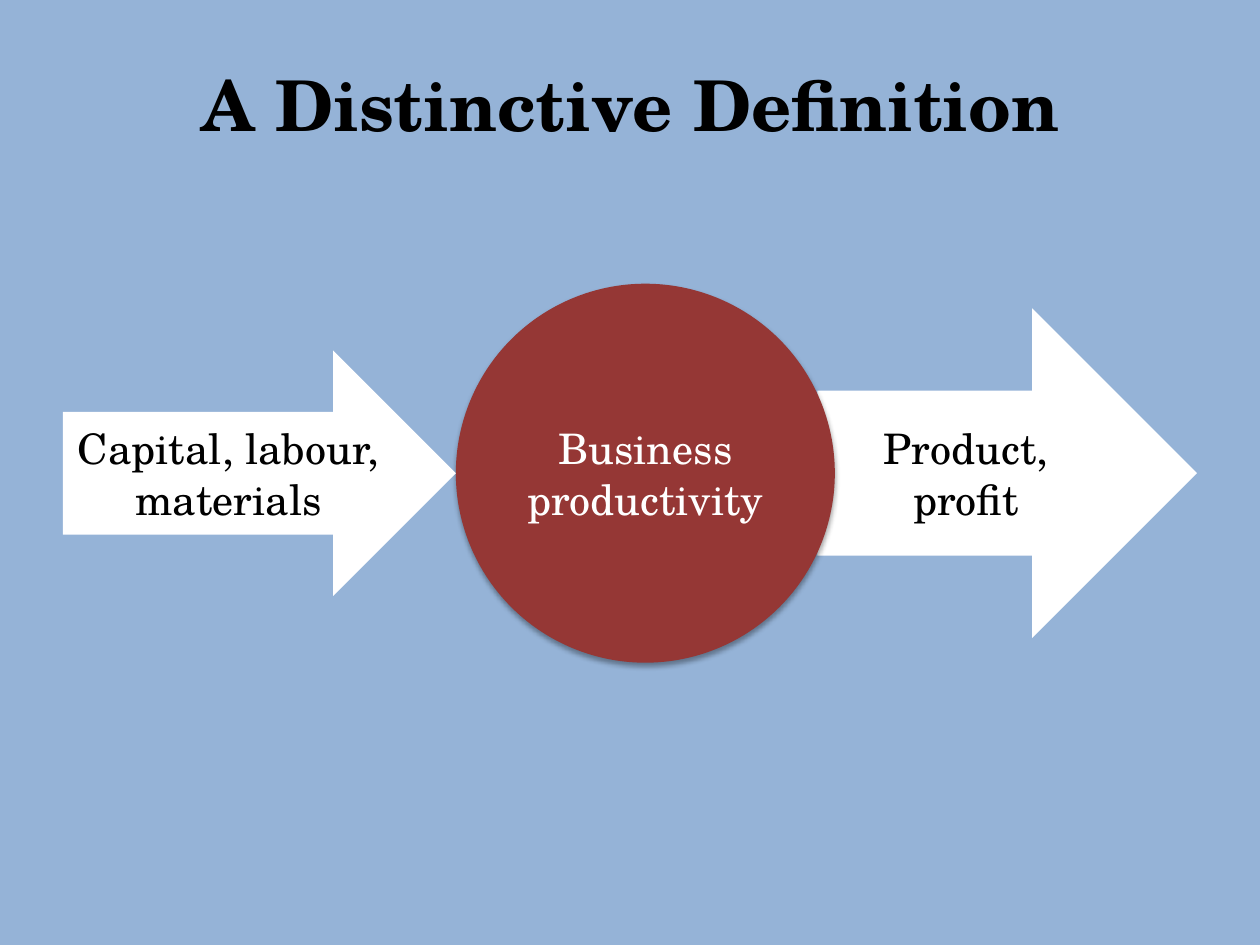
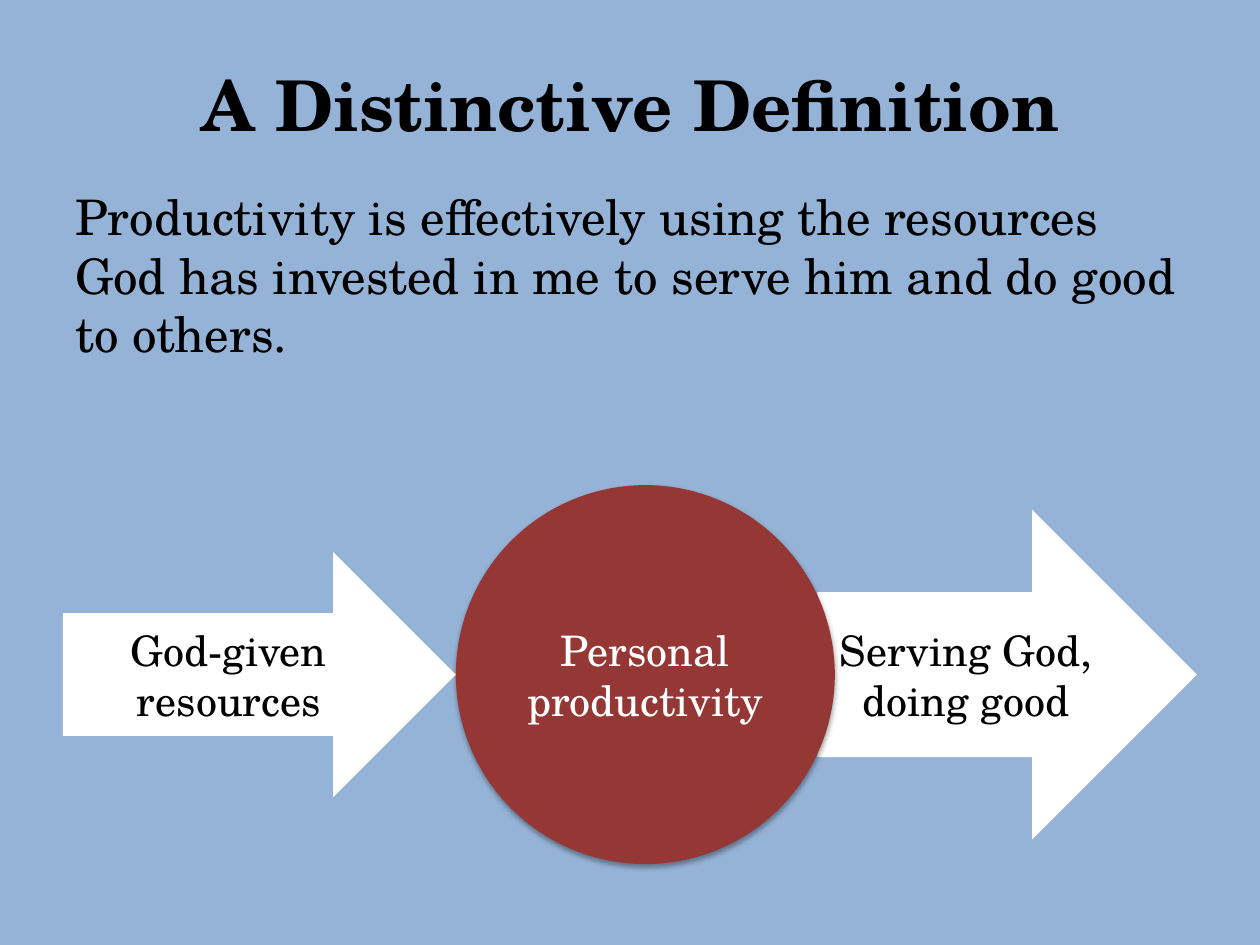
from dataclasses import dataclass

from lxml.etree import SubElement
from pptx import Presentation
from pptx.dml.color import RGBColor as Rgb
from pptx.enum.shapes import MSO_SHAPE as Kind
from pptx.enum.text import MSO_ANCHOR as Anchor, MSO_AUTO_SIZE as Fit, PP_ALIGN as Align
from pptx.oxml.ns import qn
from pptx.util import Cm, Pt


@dataclass(frozen=True)
class Theme:
    font: str = "TeX Gyre Schola"
    sky: str = "95B3D7"
    red: str = "953735"
    white: str = "FFFFFF"
    black: str = "000000"
    title: int = 40
    body: int = 28
    label: int = 24


@dataclass(frozen=True)
class Box:
    left: float
    top: float
    width: float
    height: float

    def cm(self):
        return [Cm(n) for n in (self.left, self.top, self.width, self.height)]


THEME = Theme()
TITLE = Box(3.76, 1.12, 17.91, 1.96)
BODY = Box(1.27, 3.63, 22.86, 3.84)
MIDDLE = Box(1.27, 5.72, 22.86, 7.64)
LOW = Box(1.27, 9.78, 22.86, 7.64)


def write(shape, text, size, color=THEME.black, bold=False, align=Align.CENTER, anchor=Anchor.MIDDLE):
    frame = shape.text_frame
    frame.word_wrap = True
    frame.vertical_anchor = anchor
    para = frame.paragraphs[0]
    para.alignment = align
    run = para.add_run()
    run.text = text
    font = run.font
    font.name, font.size, font.bold = THEME.font, Pt(size), bold
    font.color.rgb = Rgb.from_string(color)


def add_text(slide, box, text, size, **style):
    shape = slide.shapes.add_textbox(*box.cm())
    write(shape, text, size, anchor=Anchor.TOP, **style)
    shape.text_frame.auto_size = Fit.SHAPE_TO_FIT_TEXT


def add_part(group, kind, box, text, fill, color):
    shape = group.shapes.add_shape(kind, *box.cm())
    shape.shadow.inherit = False
    shape.fill.solid()
    shape.fill.fore_color.rgb = Rgb.from_string(fill)
    shape.line.fill.background()
    write(shape, text, THEME.label, color)
    return shape


def add_glow(shape):
    effects = shape._element.spPr.find(qn("a:effectLst"))
    shade = SubElement(effects, qn("a:outerShdw"), blurRad=str(Pt(3.1)),
                       dist=str(Pt(1.8)), dir="5400000", rotWithShape="0")
    tint = SubElement(shade, qn("a:srgbClr"), val=THEME.black)
    SubElement(tint, qn("a:alpha"), val="35000")


def add_flow(slide, box, source, core, result):
    group = slide.shapes.add_group_shape()
    size = box.height
    start, end = 7.92, 7.65

    def place(left, width, height):
        return Box(box.left + left, box.top + (size - height) / 2, width, height)

    add_part(group, Kind.RIGHT_ARROW, place(box.width - end, end, 6.65),
             result, THEME.white, THEME.black)
    disc = add_part(group, Kind.OVAL, place(start, size, size),
                    core, THEME.red, THEME.white)
    add_glow(disc)
    add_part(group, Kind.RIGHT_ARROW, place(0, start, 4.95),
             source, THEME.white, THEME.black)


def add_slide(deck, flow, labels, body=None):
    slide = deck.slides.add_slide(deck.slide_layouts[6])
    slide.background.fill.solid()
    slide.background.fill.fore_color.rgb = Rgb.from_string(THEME.sky)
    add_text(slide, TITLE, "A Distinctive Definition", THEME.title, bold=True)
    if body:
        add_text(slide, BODY, body, THEME.body, align=Align.LEFT)
    add_flow(slide, flow, *labels)


def main():
    deck = Presentation()
    deck.slide_width, deck.slide_height = Cm(25.4), Cm(19.05)
    add_slide(deck, MIDDLE,
              ("Capital, labour, materials", "Business productivity", "Product, profit"))
    add_slide(deck, LOW,
              ("God-given resources", "Personal productivity", "Serving God, doing good"),
              "Productivity is effectively using the resources God has invested in me "
              "to serve him and do good to others.")
    deck.save("out.pptx")


if __name__ == "__main__":
    main()
